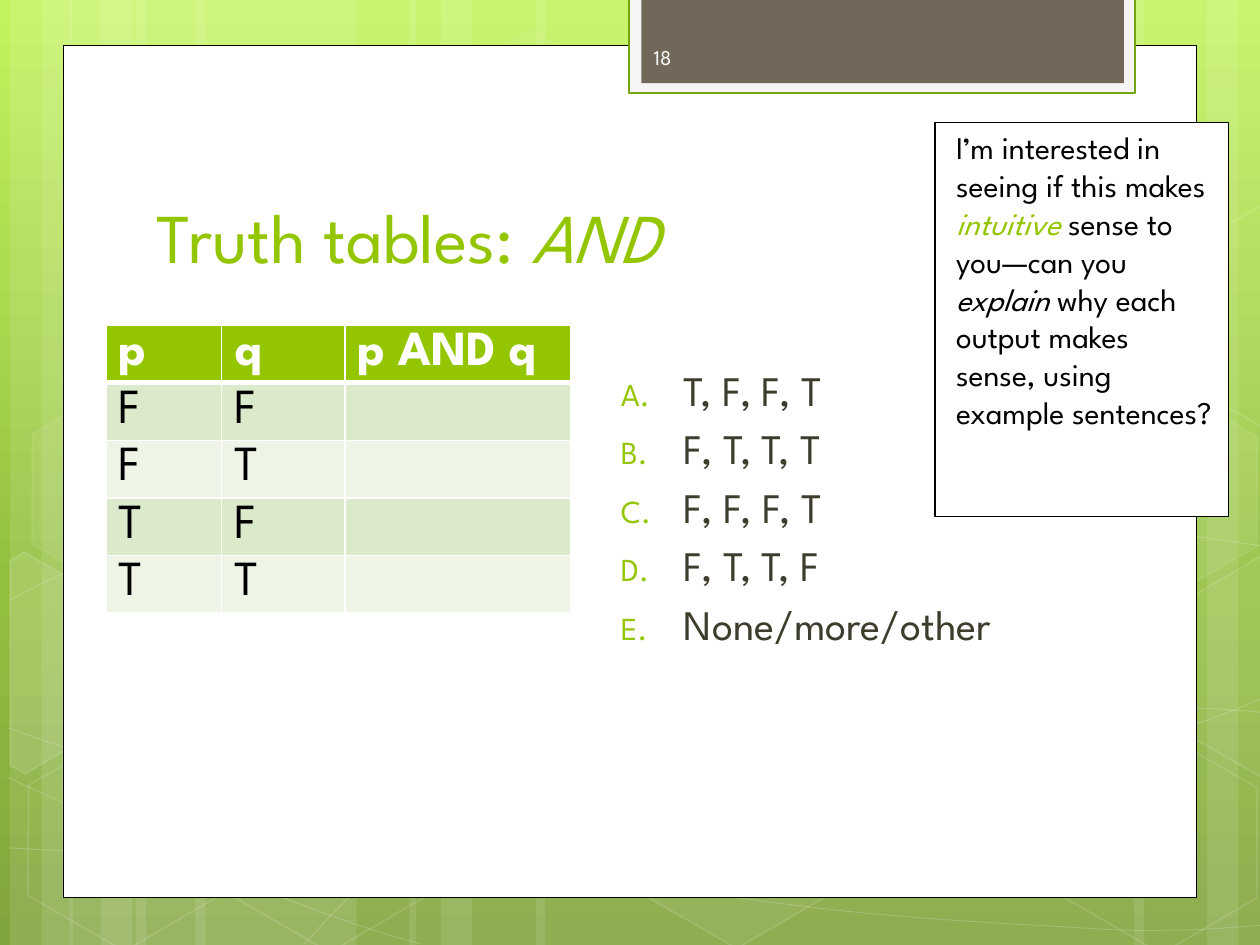
from copy import deepcopy
from math import cos, radians, sin

from lxml import etree
from pptx import Presentation
from pptx.dml.color import RGBColor
from pptx.enum.shapes import MSO_SHAPE
from pptx.enum.text import MSO_ANCHOR, MSO_AUTO_SIZE, PP_ALIGN
from pptx.oxml.ns import qn
from pptx.util import Inches, Pt

RECT, HEXAGON = MSO_SHAPE.RECTANGLE, MSO_SHAPE.HEXAGON
TOP, MIDDLE, BOTTOM = MSO_ANCHOR.TOP, MSO_ANCHOR.MIDDLE, MSO_ANCHOR.BOTTOM
LEFT, NO_FIT = PP_ALIGN.LEFT, MSO_AUTO_SIZE.NONE

FONT = "League Spartan"
TILT = 30
WHITE = RGBColor(0xFF, 0xFF, 0xFF)
BLACK = RGBColor(0, 0, 0)
GREEN = RGBColor(0x94, 0xC6, 0x00)
DARK_GREEN = RGBColor(0x74, 0xA5, 0x10)
PALE = RGBColor(0xF5, 0xF5, 0xF5)
TAUPE = RGBColor(0x71, 0x68, 0x5A)
OLIVE = RGBColor(0x3E, 0x3D, 0x2D)
NEAR_WHITE = RGBColor(0xFE, 0xFE, 0xFE)
BANDS = [RGBColor(0xDC, 0xEA, 0xCC), RGBColor(0xEE, 0xF5, 0xE7)]
BACKDROP = [(0, RGBColor(0xC3, 0xF3, 0x5F)), (0.62, RGBColor(0x93, 0xBF, 0x3F)),
            (1, RGBColor(0x81, 0xA5, 0x3E))]

# Left edge and width of the translucent vertical bands
STRIPES = [(1.08, 1.75), (0.08, 0.5), (0.33, 0.83), (1.55, 1.75), (0.55, 0.5), (0.8, 0.83),
           (7.33, 1.75), (9.58, 0.5), (9, 0.83), (4.25, 3.08), (3.25, 0.5), (3.5, 0.83)]

# Each curve: a start point, then three points for every Bezier segment
CURVES = [
    [(0.07, 6.73), (0.61, 6.76), (1.15, 6.79), (1.9, 6.78), (2.65, 6.77), (3.58, 6.75),
     (4.58, 6.65), (5.58, 6.55), (7, 6.36), (7.92, 6.17), (8.83, 5.98), (9.77, 5.68),
     (10.07, 5.51)],
    [(0.07, 4.77), (0.36, 4.61), (0.65, 4.46), (1.21, 4.31), (1.78, 4.16), (2.59, 3.94),
     (3.47, 3.87), (4.36, 3.8), (5.44, 3.79), (6.54, 3.87), (7.64, 3.95), (9.47, 4.26),
     (10.07, 4.34)],
    [(0.06, 6.17), (1.27, 6.72), (2.47, 7.27), (3.34, 7.49)],
    [(0.07, 5.78), (0.38, 5.89), (0.7, 6), (1.28, 6.16), (1.86, 6.31), (2.73, 6.56),
     (3.57, 6.73), (4.4, 6.9), (5.45, 7.08), (6.28, 7.18), (7.11, 7.29), (8, 7.33),
     (8.53, 7.36), (9.05, 7.4), (9.19, 7.38), (9.45, 7.38), (9.71, 7.37), (9.89, 7.35),
     (10.07, 7.34)],
    [(2.42, 7.49), (2.6, 7.29), (2.78, 7.09), (3.02, 6.91), (3.26, 6.73), (3.6, 6.53),
     (3.88, 6.39), (4.16, 6.25), (4.33, 6.19), (4.7, 6.09), (5.06, 5.99), (5.73, 5.85),
     (6.08, 5.78), (6.44, 5.71), (6.49, 5.71), (6.8, 5.69), (7.11, 5.66), (7.6, 5.63),
     (7.94, 5.62), (8.29, 5.61), (8.86, 5.62), (8.86, 5.62), (9.08, 5.62), (9.31, 5.62),
     (9.53, 5.62), (9.71, 5.63), (9.88, 5.64), (9.97, 5.65), (10.06, 5.66), (10.03, 5.65),
     (10.06, 5.66)],
]

# Left, top, fill opacity and outline opacity in percent
HEXAGONS = [(3.34, 0.36, 4, 8), (4.97, 5.89, 6, 12), (0.11, 5.91, None, 12),
            (0.14, 3.12, 7, 8), (1.74, 5.92, None, 12), (7.53, 4.53, 10, 12),
            (8.34, 5.93, None, 12), (8.34, 3.14, 7, 8)]

# Hexagons cut by the slide edge: centre of the tilt, corners and fill opacity
CUT_HEXAGONS = [
    ((0.36, 5.35), [(0.08, 4.45), (0.19, 4.38), (0.96, 4.82), (0.95, 5.7), (0.2, 6.14),
                    (0.08, 6.07)], 10),
    ((9.85, 5.2), [(9.26, 4.85), (10.01, 4.41), (10.09, 4.46), (10.09, 6.13), (10.02, 6.17),
                   (9.26, 5.73)], 4),
    ((9.85, 2.41), [(9.26, 2.07), (10.01, 1.63), (10.1, 1.68), (10.09, 3.35), (10.02, 3.39),
                    (9.26, 2.95)], None),
]


def set_opacity(shape, holder_path, percent):
    color = shape.element.spPr.find(f"{holder_path}/{qn('a:srgbClr')}")
    etree.SubElement(color, qn("a:alpha"), val=str(percent * 1000))


def paint(shape, fill=None, line=None, width=0, fill_opacity=100, line_opacity=100):
    shape.shadow.inherit = False
    if fill is None:
        shape.fill.background()
    else:
        shape.fill.solid()
        shape.fill.fore_color.rgb = fill
        if fill_opacity < 100:
            set_opacity(shape, qn("a:solidFill"), fill_opacity)
    if line is None:
        shape.line.fill.background()
    else:
        shape.line.color.rgb = line
        shape.line.width = Pt(width)
        if line_opacity < 100:
            set_opacity(shape, f"{qn('a:ln')}/{qn('a:solidFill')}", line_opacity)


def paint_glass(shape, fill_opacity, line_opacity, width=1):
    paint(shape, WHITE if fill_opacity else None, WHITE, width, fill_opacity or 100, line_opacity)


def add_preset(slide, preset, left, top, width, height):
    return slide.shapes.add_shape(preset, Inches(left), Inches(top), Inches(width), Inches(height))


def add_outline(slide, points, close):
    corners = [(Inches(x), Inches(y)) for x, y in points]
    builder = slide.shapes.build_freeform(*corners[0])
    builder.add_line_segments(corners[1:], close=close)
    return builder.convert_to_shape()


def add_curve(slide, knots):
    """Draw the knots as a freeform and join every three points into one Bezier segment."""
    curve = add_outline(slide, knots, False)
    segments = curve.element.findall(f".//{qn('a:lnTo')}")
    for first, second, end in zip(segments[::3], segments[1::3], segments[2::3]):
        bezier = etree.Element(qn("a:cubicBezTo"))
        first.addprevious(bezier)
        for segment in (first, second, end):
            bezier.append(segment[0])
            segment.getparent().remove(segment)
    return curve


def add_cut_hexagon(slide, center, corners):
    cx, cy = center
    c, s = cos(radians(TILT)), sin(radians(TILT))
    upright = [(cx + (x - cx) * c + (y - cy) * s, cy - (x - cx) * s + (y - cy) * c)
               for x, y in corners]
    hexagon = add_outline(slide, upright, True)
    hexagon.rotation = TILT
    return hexagon


def add_run(paragraph, text, size, color, italic=False, bold=False):
    run = paragraph.add_run()
    run.text = text
    font = run.font
    font.name, font.size, font.italic, font.bold = FONT, Pt(size), italic, bold
    font.color.rgb = color


def prepare_frame(shape, anchor):
    frame = shape.text_frame
    frame.word_wrap, frame.auto_size, frame.vertical_anchor = True, NO_FIT, anchor
    frame.paragraphs[0].alignment = LEFT
    return frame


def add_text_area(slide, left, top, width, height, anchor):
    box = slide.shapes.add_textbox(Inches(left), Inches(top), Inches(width), Inches(height))
    return prepare_frame(box, anchor)


def add_backdrop(slide):
    fill = slide.background.fill
    fill.gradient()
    fill.gradient_angle = 270
    stop_list = slide.element.find(f".//{qn('a:gsLst')}")
    stop_list.append(deepcopy(stop_list[-1]))
    for stop, (position, color) in zip(fill.gradient_stops, BACKDROP):
        stop.position, stop.color.rgb = position, color
    for left, width in STRIPES:
        paint(add_preset(slide, RECT, left, 0, width, 7.5), WHITE, fill_opacity=10)
    for knots in CURVES:
        paint_glass(add_curve(slide, knots), None, 20, 0.5)
    for left, top, fill_opacity, line_opacity in HEXAGONS:
        hexagon = add_preset(slide, HEXAGON, left, top, 1.75, 1.52)
        hexagon.rotation = TILT
        hexagon.adjustments[0] = 0.285
        paint_glass(hexagon, fill_opacity, line_opacity)
    for center, corners, fill_opacity in CUT_HEXAGONS:
        paint_glass(add_cut_hexagon(slide, center, corners), fill_opacity, 12)


def place_title(slide):
    title = slide.shapes.title
    title.left, title.top, title.width, title.height = map(Inches, (1.14, 1, 7.68, 1.25))
    title.element.getparent().append(title.element)  # in front of the panel
    heading = prepare_frame(title, BOTTOM).paragraphs[0]
    add_run(heading, "Truth tables: ", 40, GREEN)
    add_run(heading, "AND", 40, GREEN, italic=True)


def add_choices(slide, choices):
    frame = add_text_area(slide, 4.76, 2.84, 4.33, 3.42, TOP)
    for i, choice in enumerate(choices):
        paragraph = frame.add_paragraph() if i else frame.paragraphs[0]
        paragraph.space_before = Pt(4.7)
        add_run(paragraph, choice, 24, OLIVE)
        props = paragraph._p.get_or_add_pPr()
        props.set("marL", str(Inches(0.57)))
        props.set("indent", str(Inches(-0.5)))
        bullet_color = etree.SubElement(props, qn("a:buClr"))
        etree.SubElement(bullet_color, qn("a:srgbClr"), val=str(GREEN))
        etree.SubElement(props, qn("a:buSzPct"), val="76000")
        etree.SubElement(props, qn("a:buFont"), typeface=FONT)
        etree.SubElement(props, qn("a:buAutoNum"), type="alphaUcPeriod")


def set_borders(cell, widths):
    props = cell._tc.get_or_add_tcPr()
    for i, (side, width) in enumerate(widths.items()):
        border = etree.Element(qn(f"a:ln{side}"), w=str(Pt(width)))
        fill = etree.SubElement(border, qn("a:solidFill"))
        etree.SubElement(fill, qn("a:srgbClr"), val=str(WHITE))
        props.insert(i, border)


def add_truth_table(slide, rows, widths):
    table = slide.shapes.add_table(len(rows), len(widths), Inches(0.84), Inches(2.58),
                                   Inches(sum(widths)), Inches(0.41 * len(rows))).table
    for column, width in zip(table.columns, widths):
        column.width = Inches(width)
    for r, texts in enumerate(rows):
        header = r == 0
        for c, text in enumerate(texts):
            cell = table.cell(r, c)
            cell.fill.solid()
            cell.fill.fore_color.rgb = GREEN if header else BANDS[(r - 1) % 2]
            set_borders(cell, {"L": 1, "R": 1, "T": 1, "B": 3 if header else 1})
            if text:
                add_run(cell.text_frame.paragraphs[0], text, 28,
                        WHITE if header else BLACK, bold=header)


def add_callout(slide):
    callout = add_preset(slide, RECT, 7.42, 0.97, 2.33, 3.13)
    paint(callout, WHITE, BLACK, 0.75)
    prompt = prepare_frame(callout, TOP).paragraphs[0]
    prompt._p.get_or_add_pPr().set("marL", str(Inches(0.07)))
    add_run(prompt, "I’m interested in seeing if this makes ", 18, BLACK)
    add_run(prompt, "intuitive ", 18, GREEN, italic=True)
    add_run(prompt, "sense to you—can you ", 18, BLACK)
    add_run(prompt, "explain ", 18, BLACK, italic=True)
    add_run(prompt, "why each output makes sense, using example sentences?", 18, BLACK)


def main():
    deck = Presentation()
    deck.slide_width, deck.slide_height = Inches(10), Inches(7.5)
    slide = deck.slides.add_slide(deck.slide_layouts[5])
    add_backdrop(slide)
    # White panel and the tab at its top
    paint(add_preset(slide, RECT, 0.5, 0.36, 9, 6.76), WHITE, BLACK, 0.5)
    paint(add_preset(slide, RECT, 4.99, -0.02, 4.02, 0.76), PALE, DARK_GREEN, 1.25)
    paint(add_preset(slide, RECT, 5.09, -0.02, 3.83, 0.68), TAUPE)
    # Content
    place_title(slide)
    add_choices(slide, ["T, F, F, T", "F, T, T, T", "F, F, F, T", "F, T, T, F",
                        "None/more/other"])
    page_number = add_text_area(slide, 5.09, 0.25, 1.46, 0.4, MIDDLE)
    add_run(page_number.paragraphs[0], "18", 12, NEAR_WHITE)
    inputs = [(p, q, "") for p in "FT" for q in "FT"]
    add_truth_table(slide, [("p", "q", "p AND q"), *inputs], [0.92, 0.98, 1.79])
    add_callout(slide)
    deck.save("out.pptx")


if __name__ == "__main__":
    main()
